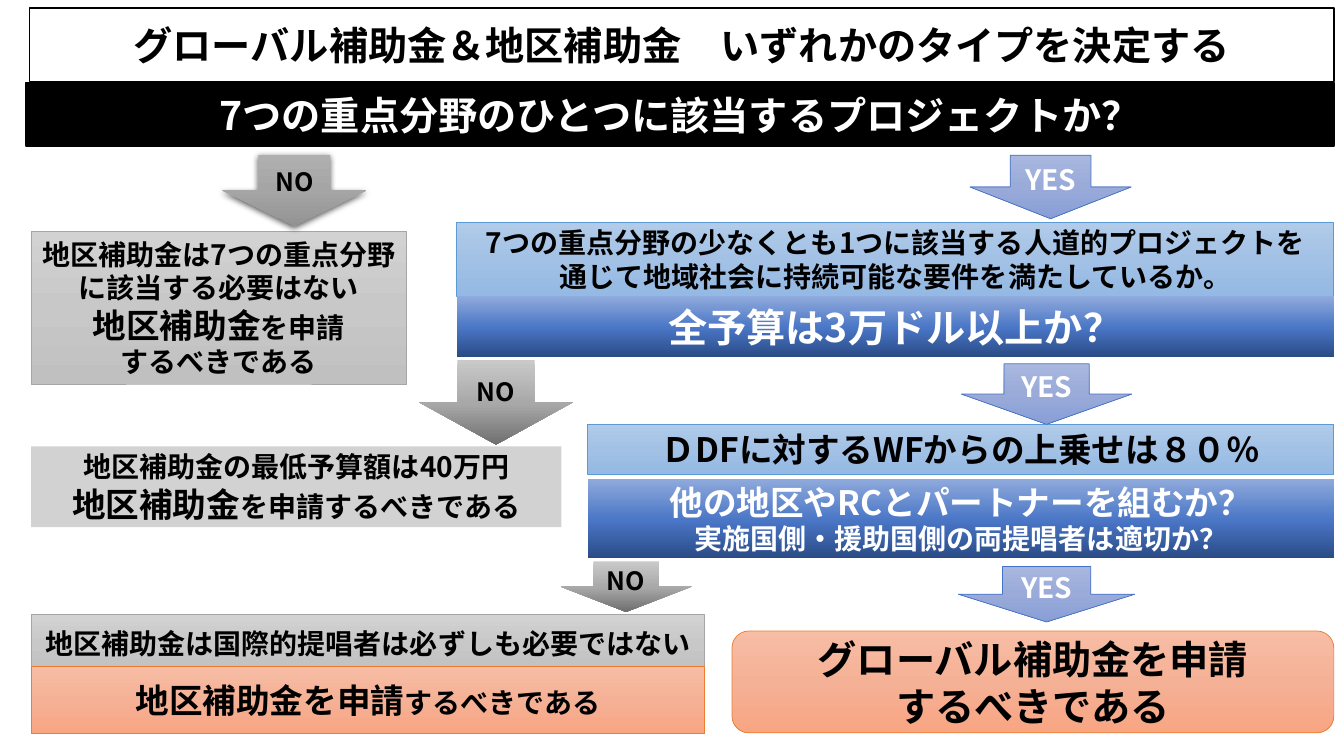
from copy import deepcopy

from lxml import etree
from pptx import Presentation
from pptx.dml.color import RGBColor
from pptx.enum.shapes import MSO_SHAPE
from pptx.enum.text import MSO_ANCHOR, MSO_AUTO_SIZE, PP_ALIGN
from pptx.oxml.ns import qn
from pptx.util import Inches, Pt

RECT = MSO_SHAPE.RECTANGLE
ROUND = MSO_SHAPE.FLOWCHART_ALTERNATE_PROCESS
ARROW = MSO_SHAPE.DOWN_ARROW
MIDDLE = MSO_ANCHOR.MIDDLE
CENTER = PP_ALIGN.CENTER
FIXED = MSO_AUTO_SIZE.NONE

FONT = "Noto Sans CJK JP"
BLACK = RGBColor(0, 0, 0)
WHITE = RGBColor(255, 255, 255)
GRAY = RGBColor(0xA5, 0xA5, 0xA5)
SKY = RGBColor(0x5B, 0x9B, 0xD5)
BLUE = RGBColor(0x44, 0x72, 0xC4)
ORANGE = RGBColor(0xED, 0x7D, 0x31)

# Each style: colours from top to bottom, place of the middle one, line, text
STYLES = {
    "black": (["000000"], 0, BLACK, WHITE),
    "flat": (["D2D2D2"], 0, None, BLACK),
    "gray": (["D2D2D2", "C8C8C8", "C0C0C0"], 0.5, GRAY, BLACK),
    "sky": (["B1CBE9", "A3C1E5", "93B9E4"], 0.5, SKY, BLACK),
    "navy": (["8FAADC", "4A76C6", "2A4B86"], 0.52, None, WHITE),
    "peach": (["F7BDA5", "F5B196", "F8A582"], 0.5, ORANGE, BLACK),
    "yes": (["A8B7DF", "9AABD9", "889ED7"], 0.5, BLUE, WHITE),
    "no": (["C9C9C9", "A8A8A8", "6F6F6F"], 0.52, None, BLACK),
    "first": (["AFAFAF", "A5A5A5", "939393"], 0.5, None, BLACK),
}

# Column edges, in inches
LEFT, MID, INNER, LAST, RIGHT = 0.31, 4.53, 5.83, 7.26, 13.23

# Each box: shape, style, left, right, top, height, paragraphs of (text, size)
BOXES = [
    (RECT, "black", 0.26, RIGHT, 0.82, 0.63,
     [[("7つの重点分野のひとつに該当するプロジェクトか？", 28)]]),
    (RECT, "gray", LEFT, 4.03, 2.3, 1.51,
     [[("地区補助金は7つの重点分野に該当する必要はない", 20)],
      [("地区補助金", 24), ("を申請", 20)],
      [("するべきである", 20)]]),
    (RECT, "sky", MID, RIGHT, 2.21, 0.73,
     [[("7つの重点分野の少なくとも1つに該当する人道的プロジェクトを", 20)],
      [("通じて地域社会に持続可能な要件を満たしているか。", 20)]]),
    (RECT, "navy", MID, RIGHT, 2.94, 0.6, [[("全予算は3万ドル以上か？", 28)]]),
    (RECT, "flat", LEFT, 5.57, 4.43, 0.8,
     [[("地区補助金の最低予算額は40万円", 20)],
      [("地区補助金", 24), ("を申請するべきである", 20)]]),
    (RECT, "sky", INNER, RIGHT, 4.21, 0.5,
     [[("ＤDFに対するWFからの上乗せは８０％", 24)]]),
    (RECT, "navy", INNER, RIGHT, 4.75, 0.79,
     [[("他の地区やRCとパートナーを組むか？", 24)],
      [("実施国側・援助国側の両提唱者は適切か？", 20)]]),
    (ROUND, "peach", LAST, RIGHT, 6.26, 1.01,
     [[("グローバル補助金を申請", 28)], [("するべきである", 28)]]),
    (RECT, "gray", LEFT, 6.99, 6.1, 0.57,
     [[("地区補助金は国際的提唱者は必ずしも必要ではない", 20)]]),
    (RECT, "peach", LEFT, 6.99, 6.61, 0.67,
     [[("地区補助金を申請", 24), ("するべきである", 20)]]),
]

# Each arrow: style, centre, width, top, height, word, size
ARROWS = [
    ("first", 2.92, 1.43, 1.54, 0.7, "NO", 18),
    ("no", 4.92, 1.53, 3.57, 0.84, "NO", 18),
    ("no", 6.21, 1.3, 5.57, 0.5, "NO", 18),
    ("yes", 10.42, 1.6, 1.54, 0.63, "YES", 20),
    ("yes", 10.38, 1.69, 3.61, 0.6, "YES", 20),
    ("yes", 10.38, 1.75, 5.62, 0.55, "YES", 20),
]
for style, mid, width, top, high, word, size in ARROWS:
    BOXES.append((ARROW, style, mid - width / 2, mid + width / 2, top, high,
                  [[(word, size)]]))


def write(shape, paras, color):
    frame = shape.text_frame
    frame.word_wrap = True
    frame.auto_size = FIXED
    frame.vertical_anchor = MIDDLE
    for i, parts in enumerate(paras):
        para = frame.add_paragraph() if i else frame.paragraphs[0]
        para.alignment = CENTER
        para.line_spacing = 1.0
        font = para.font
        font.name, font.bold = FONT, True
        font.color.rgb = color
        latin = para._p.pPr.find(qn("a:defRPr")).find(qn("a:latin"))
        east = etree.Element(qn("a:ea"), typeface=FONT)
        latin.addnext(east)
        same = len({size for _, size in parts}) == 1
        if same:
            font.size = Pt(parts[0][1])
        for text, size in parts:
            run = para.add_run()
            run.text = text
            if not same:
                run.font.size = Pt(size)


def paint(shape, colors, place, line):
    """Fill from top to bottom and draw the outline."""
    fill = shape.fill
    if len(colors) == 1:
        fill.solid()
        fill.fore_color.rgb = RGBColor.from_string(colors[0])
    else:
        fill.gradient()
        fill.gradient_angle = 270
        first = next(shape._element.spPr.iter(qn("a:gs")))
        first.addnext(deepcopy(first))
        for stop, color, pos in zip(fill.gradient_stops, colors, (0, place, 1)):
            stop.color.rgb = RGBColor.from_string(color)
            stop.position = pos
    if line is None:
        shape.line.fill.background()
    else:
        shape.line.color.rgb = line
        shape.line.width = Pt(1 if len(colors) == 1 else 0.5)


deck = Presentation()
deck.slide_width, deck.slide_height = Inches(13.33), Inches(7.5)
slide = deck.slides.add_slide(deck.slide_layouts[5])

title = slide.shapes.title
title.left, title.top = Inches(0.29), Inches(0.08)
title.width, title.height = Inches(12.94), Inches(0.73)
paint(title, ["FFFFFF"], 0, BLACK)
write(title, [[("グローバル補助金＆地区補助金　いずれかのタイプを決定する", 28)]], BLACK)

for kind, style, left, right, top, high, paras in BOXES:
    shape = slide.shapes.add_shape(
        kind, Inches(left), Inches(top), Inches(right - left), Inches(high))
    shape.shadow.inherit = False
    colors, place, line, ink = STYLES[style]
    paint(shape, colors, place, line)
    write(shape, paras, ink)
    if kind == ARROW:
        shape.text_frame.margin_left = shape.text_frame.margin_right = 0
    if style == "first":
        effects = shape._element.spPr.find(qn("a:effectLst"))
        shade = etree.SubElement(
            effects, qn("a:outerShdw"), blurRad=str(Pt(4.5)),
            dist=str(Pt(1.5)), dir="5400000", algn="ctr", rotWithShape="0")
        tone = etree.SubElement(shade, qn("a:srgbClr"), val=str(BLACK))
        etree.SubElement(tone, qn("a:alpha"), val="63000")

deck.save("out.pptx")
